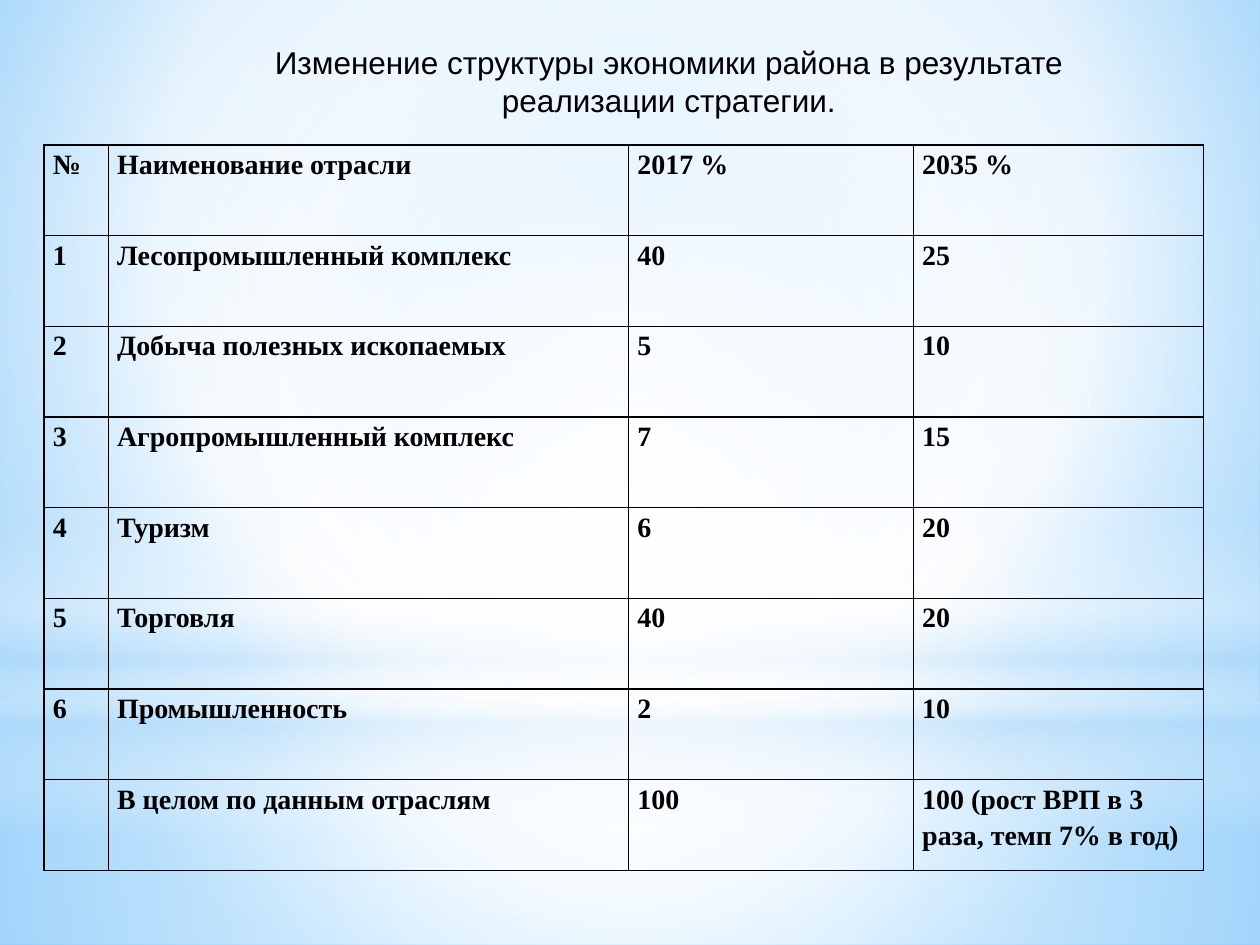
import pptx
import pptx.dml.color
import pptx.enum.shapes
import pptx.enum.text
import pptx.oxml.ns
import pptx.oxml.xmlchemy
import pptx.util
import lxml.etree

Inches, Pt, qn = pptx.util.Inches, pptx.util.Pt, pptx.oxml.ns.qn
SubElement = lxml.etree.SubElement


def color(hex_string):
    return pptx.dml.color.RGBColor.from_string(hex_string)


def set_gradient(owner, stops, center=None, angle=90):
    """Stops are (position %, colour, opacity %); center is left, top, right, bottom in %."""
    gradient = next(owner.iter(qn("a:gradFill")))
    for child in list(gradient):
        gradient.remove(child)
    stop_list = SubElement(gradient, qn("a:gsLst"))
    for position, hex_string, opacity in stops:
        stop = SubElement(stop_list, qn("a:gs"), pos=str(position * 1000))
        stop_color = SubElement(stop, qn("a:srgbClr"), val=hex_string)
        if opacity < 100:
            SubElement(stop_color, qn("a:alpha"), val=str(opacity * 1000))
    if center:
        circle = SubElement(gradient, qn("a:path"), {"path": "circle"})
        focus = SubElement(circle, qn("a:fillToRect"))
        for side, percent in zip("ltrb", center):
            focus.set(side, str(percent * 1000))
    else:
        SubElement(gradient, qn("a:lin"), ang=str(angle * 60000), scaled="0")


deck = pptx.Presentation()
deck.slide_width, deck.slide_height = Inches(10), Inches(7.5)
slide = deck.slides.add_slide(deck.slide_layouts[6])

# Background
slide.background.fill.gradient()
set_gradient(slide.background._cSld,
             [(0, "9ED5FF", 100), (60, "FFFFFF", 100), (100, "5BB9FF", 100)],
             (20, 10, 20, 60))

# Translucent sky and water layers: shape, top, height, stops, gradient centre
RECTANGLE = pptx.enum.shapes.MSO_SHAPE.RECTANGLE
OVAL = pptx.enum.shapes.MSO_SHAPE.OVAL
middle = (50, 50, 50, 50)
layers = [
    (RECTANGLE, 5.58, 1.92,
     [(0, "FFFFFF", 91), (37, "FFFFFF", 76), (100, "B4DCFA", 79)], middle),
    (RECTANGLE, 0, 5.58,
     [(0, "FFFFFF", 89), (48, "FFFFFF", 62), (100, "B4DCFA", 79)], middle),
    (RECTANGLE, 4.12, 2.5,
     [(0, "FFFFFF", 0), (29, "FFFFFF", 30), (45, "B4DCFA", 40),
      (55, "FFFFFF", 26), (65, "B4DCFA", 60), (100, "FFFFFF", 0)], None),
    (OVAL, 1.75, 5.58, [(0, "FFFFFF", 100), (56, "FFFFFF", 0)], middle),
]
for kind, top, height, stops, center in layers:
    layer = slide.shapes.add_shape(kind, 0, Inches(top), Inches(10), Inches(height))
    layer.shadow.inherit = False
    layer.line.fill.background()
    layer.fill.gradient()
    set_gradient(layer._element.spPr, stops, center)

# Title
title = slide.shapes.add_textbox(Inches(1.61), Inches(0.29), Inches(7.4), Inches(0.71))
title.text_frame.word_wrap = True
title.text_frame.auto_size = pptx.enum.text.MSO_AUTO_SIZE.SHAPE_TO_FIT_TEXT
heading = title.text_frame.paragraphs[0]
heading.alignment = pptx.enum.text.PP_ALIGN.CENTER
heading_run = heading.add_run()
heading_run.text = "Изменение структуры экономики района в результате реализации стратегии."
heading_run.font.size = Pt(18)
heading_run.font.name = "Arial"
heading_run.font.color.rgb = color("000000")

# Industry table
industries = [
    ("№", "Наименование отрасли", "2017 %", "2035 %"),
    ("1", "Лесопромышленный комплекс", "40", "25"),
    ("2", "Добыча полезных ископаемых", "5", "10"),
    ("3", "Агропромышленный комплекс", "7", "15"),
    ("4", "Туризм", "6", "20"),
    ("5", "Торговля", "40", "20"),
    ("6", "Промышленность", "2", "10"),
    ("", "В целом по данным отраслям", "100", "100 (рост ВРП в 3 раза, темп 7% в год)"),
]
column_widths = [0.51, 4.13, 2.26, 2.3]
structure = slide.shapes.add_table(len(industries), len(column_widths), Inches(0.35), Inches(1.15),
                                   Inches(9.2), Inches(5.75)).table
structure.first_row = structure.horz_banding = False
for column, width in zip(structure.columns, column_widths):
    column.width = Inches(width)

for row_index, industry in enumerate(industries):
    structure.rows[row_index].height = Inches(0.72)
    for column_index, value in enumerate(industry):
        cell = structure.cell(row_index, column_index)
        cell.margin_left = cell.margin_right = Inches(0.07)
        cell.margin_top = cell.margin_bottom = 0
        # Borders come before the fill in the cell properties
        cell_properties = cell._tc.get_or_add_tcPr()
        for side in ("a:lnL", "a:lnR", "a:lnT", "a:lnB"):
            border = SubElement(cell_properties, qn(side), w=str(Pt(1)))
            SubElement(SubElement(border, qn("a:solidFill")), qn("a:srgbClr"), val="000000")
        cell.fill.background()
        if value:
            paragraph = cell.text_frame.paragraphs[0]
            paragraph.line_spacing = 1.15
            run = paragraph.add_run()
            run.text = value
            run.font.size = Pt(16)
            run.font.name = "Times New Roman"
            run.font.bold = True
            run.font.color.rgb = color("000000")

deck.save("out.pptx")
